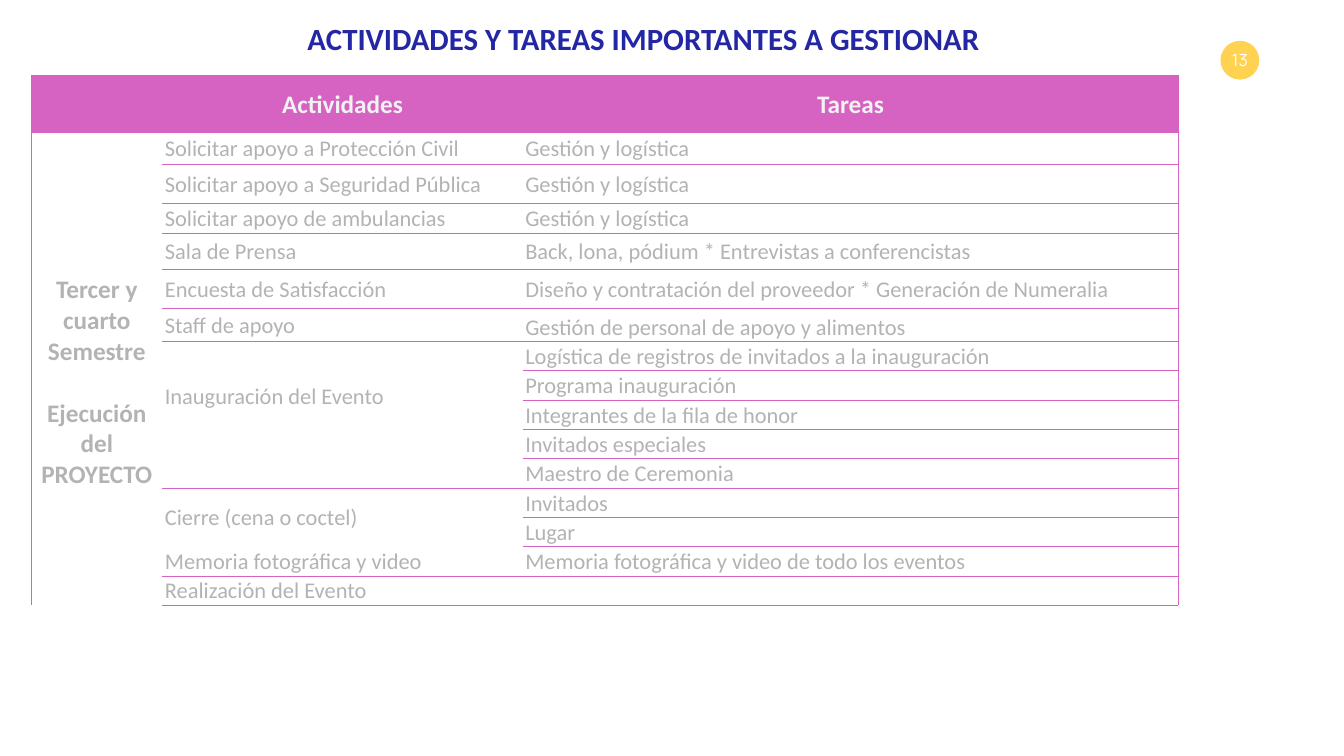
from lxml.etree import SubElement
from pptx import Presentation
from pptx.dml.color import RGBColor
from pptx.enum.shapes import MSO_SHAPE as Shape
from pptx.enum.text import MSO_ANCHOR as Anchor, PP_ALIGN as Align
from pptx.oxml.ns import qn
from pptx.util import Inches, Pt

COLORS = {"title": "2427A3", "pink": "D662C2", "header": "F2F2F2",
          "body": "B3B3B3", "badge": "FFD252", "white": "FFFFFF"}
TITLE = "ACTIVIDADES Y TAREAS IMPORTANTES A GESTIONAR"
HEADERS = ["", "Actividades", "Tareas"]
STAGE = ["Tercer y cuarto Semestre", "Ejecución del PROYECTO"]
LOGISTICS = "Gestión y logística"
CLOSING = "Cierre (cena o coctel)"
OPENING = "Inauguración del Evento"
ACTIVITIES = [
    ("Solicitar apoyo a Protección Civil", [LOGISTICS]),
    ("Solicitar apoyo a Seguridad Pública", [LOGISTICS]),
    ("Solicitar apoyo de ambulancias", [LOGISTICS]),
    ("Sala de Prensa", ["Back, lona, pódium * Entrevistas a conferencistas"]),
    ("Encuesta de Satisfacción",
     ["Diseño y contratación del proveedor * Generación de Numeralia"]),
    ("Staff de apoyo", ["Gestión de personal de apoyo y alimentos"]),
    (OPENING, ["Logística de registros de invitados a la inauguración",
               "Programa inauguración", "Integrantes de la fila de honor",
               "Invitados especiales", "Maestro de Ceremonia"]),
    (CLOSING, ["Invitados", "Lugar"]),
    ("Memoria fotográfica y video",
     ["Memoria fotográfica y video de todo los eventos"]),
    ("Realización del Evento", [""]),
]
COLUMN_WIDTHS = [2.6, 7.15, 13]
ROW_HEIGHTS = [1.12, 0.63, 0.79, 0.58, 0.72, 0.78, 0.65] + [0.57] * 9
LAST_ROW = len(ROW_HEIGHTS) - 1


def add_text(paragraph, text, size, color, bold=False, align=Align.LEFT, font="Calibri"):
    paragraph.alignment = align
    run = paragraph.add_run()
    run.text = text
    run.font.name, run.font.size, run.font.bold = font, Pt(size), bold
    run.font.color.rgb = RGBColor.from_string(COLORS[color])


def set_borders(cell, sides):
    """Draw the sides named among L, R, T and B, and hide the others."""
    properties = cell._tc.get_or_add_tcPr()
    for side in "LRTB":
        line = SubElement(properties, qn(f"a:ln{side}"), w=str(Pt(0.5)))
        if side in sides:
            fill = SubElement(line, qn("a:solidFill"))
            SubElement(fill, qn("a:srgbClr"), val=COLORS["pink"])
        else:
            SubElement(line, qn("a:noFill"))


def fill_cell(cell, text, size=32, color="body", bold=False, align=Align.LEFT):
    cell.vertical_anchor = Anchor.MIDDLE
    cell.margin_left = cell.margin_right = Inches(0.05)
    cell.margin_top = cell.margin_bottom = 0
    paragraph = cell.text_frame.paragraphs[0]
    paragraph.line_spacing = 1.07
    if text:
        add_text(paragraph, text, size, color, bold, align)


def format_grid(table, ruled_rows):
    """Set sizes, outer frame, row rules and fills; ruled_rows end an activity."""
    for column, width in zip(table.columns, COLUMN_WIDTHS):
        column.width = Inches(width)
    for row_index, (row, height) in enumerate(zip(table.rows, ROW_HEIGHTS)):
        row.height = Inches(height)
        for column_index, cell in enumerate(row.cells):
            ruled = column_index == 2 or (column_index == 1 and row_index in ruled_rows)
            above_ruled = column_index == 2 or (
                column_index == 1 and row_index - 1 in ruled_rows)
            sides = "L" if column_index == 0 else "R" if column_index == 2 else ""
            sides += "T" if row_index < 2 or above_ruled else ""
            sides += "B" if row_index in (0, LAST_ROW) or ruled else ""
            set_borders(cell, sides)
            if row_index == 0:
                cell.fill.solid()
                cell.fill.fore_color.rgb = RGBColor.from_string(COLORS["pink"])
            else:
                cell.fill.background()


def add_activity_table(slide):
    frame = slide.shapes.add_table(
        len(ROW_HEIGHTS), len(COLUMN_WIDTHS), Inches(0.62), Inches(1.5),
        Inches(sum(COLUMN_WIDTHS)), Inches(sum(ROW_HEIGHTS)))
    table = frame.table
    table.first_row = table.horz_banding = False

    starts, row = [], 1
    for activity, tasks in ACTIVITIES:
        starts.append(row)
        row += len(tasks)
    ruled_rows = {start + len(tasks) - 1
                  for start, (activity, tasks) in zip(starts, ACTIVITIES)
                  if activity != CLOSING}
    format_grid(table, ruled_rows)

    for column, header in enumerate(HEADERS):
        fill_cell(table.cell(0, column), header, 36, "header", True, Align.CENTER)
    for start, (activity, tasks) in zip(starts, ACTIVITIES):
        cell = table.cell(start, 1)
        if len(tasks) > 1:
            cell.merge(table.cell(start + len(tasks) - 1, 1))
        fill_cell(cell, activity)
        if activity == OPENING:
            cell.margin_bottom = Inches(0.72)
        for offset, task in enumerate(tasks):
            fill_cell(table.cell(start + offset, 2), task)
        if activity == "Staff de apoyo":
            table.cell(start, 2).vertical_anchor = Anchor.BOTTOM

    stage = table.cell(1, 0)
    stage.merge(table.cell(LAST_ROW, 0))
    stage.vertical_anchor = Anchor.MIDDLE
    stage.margin_top, stage.margin_bottom = Inches(0.56), 0
    first = stage.text_frame.paragraphs[0]
    second = stage.text_frame.add_paragraph()
    second.space_before = Pt(44)
    for paragraph, text in zip((first, second), STAGE):
        add_text(paragraph, text, 36, "body", True, Align.CENTER)


def add_page_badge(slide, number):
    badge = slide.shapes.add_shape(
        Shape.OVAL, Inches(24.21), Inches(0.81), Inches(0.77), Inches(0.77))
    badge.shadow.inherit = False
    badge.fill.solid()
    badge.fill.fore_color.rgb = RGBColor.from_string(COLORS["badge"])
    badge.line.fill.background()
    frame = badge.text_frame
    frame.word_wrap = False
    frame.vertical_anchor = Anchor.MIDDLE
    frame.margin_left = frame.margin_right = frame.margin_top = frame.margin_bottom = 0
    add_text(frame.paragraphs[0], number, 24, "white", align=Align.CENTER, font="Manrope")


def main():
    presentation = Presentation()
    presentation.slide_width, presentation.slide_height = Inches(26.66), Inches(15)
    slide = presentation.slides.add_slide(presentation.slide_layouts[5])
    title = slide.shapes.title
    title.left, title.top = Inches(3.46), Inches(0.34)
    title.width, title.height = Inches(18.62), Inches(0.84)
    title.text_frame.vertical_anchor = Anchor.MIDDLE
    add_text(title.text_frame.paragraphs[0], TITLE, 44, "title", True, Align.CENTER)
    add_page_badge(slide, "13")
    add_activity_table(slide)
    presentation.save("out.pptx")


if __name__ == "__main__":
    main()
